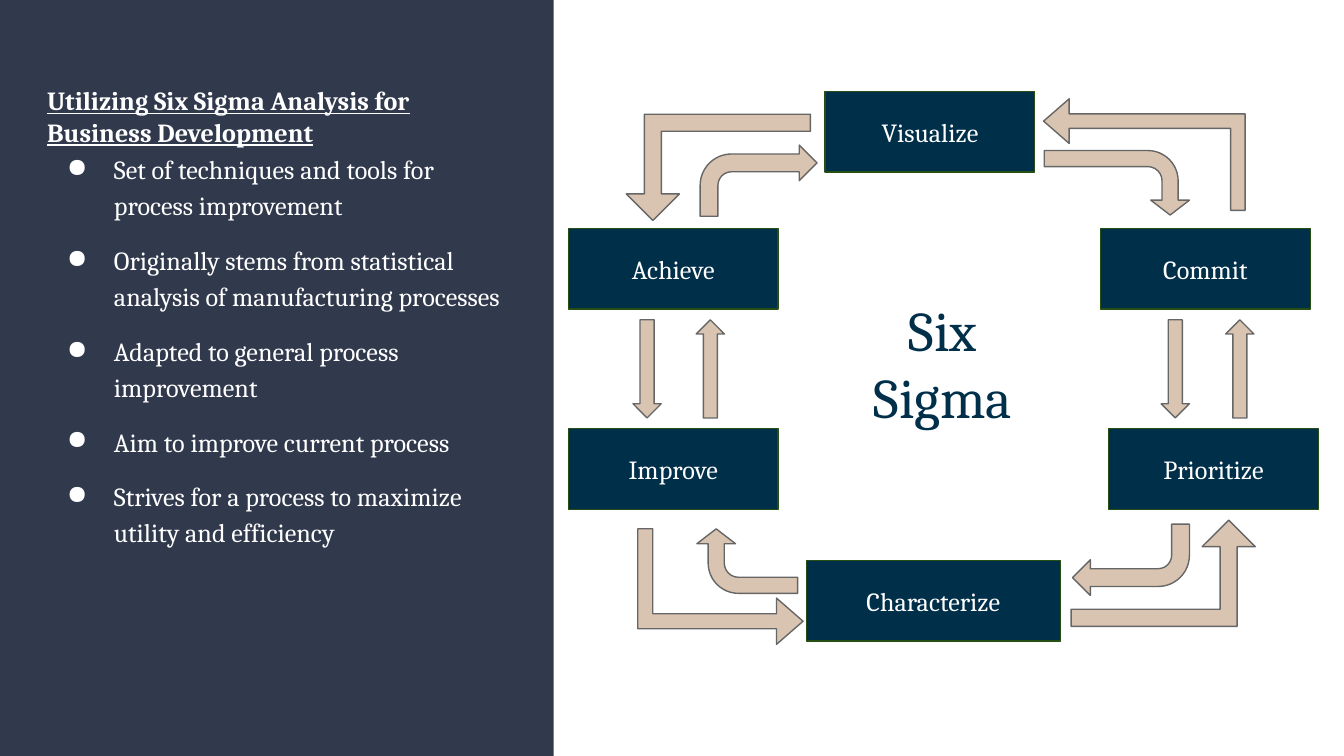
from lxml import etree
from pptx import Presentation
from pptx.dml.color import RGBColor
from pptx.enum.shapes import MSO_SHAPE
from pptx.enum.text import MSO_ANCHOR, MSO_AUTO_SIZE, PP_ALIGN
from pptx.oxml.ns import qn
from pptx.util import Inches, Pt

RECT = MSO_SHAPE.RECTANGLE
DOWN = MSO_SHAPE.DOWN_ARROW
CURVE = MSO_SHAPE.BENT_ARROW
ELBOW = MSO_SHAPE.BENT_UP_ARROW
TOP, MIDDLE = MSO_ANCHOR.TOP, MSO_ANCHOR.MIDDLE
LEFT, CENTER = PP_ALIGN.LEFT, PP_ALIGN.CENTER
FIXED = MSO_AUTO_SIZE.NONE

SLATE = RGBColor(0x31, 0x39, 0x4D)
NAVY = RGBColor(0x00, 0x2F, 0x4A)
GREEN = RGBColor(0x27, 0x4E, 0x13)
SAND = RGBColor(0xD9, 0xC4, 0xB1)
GRAY = RGBColor(0x66, 0x66, 0x66)
WHITE = RGBColor(0xFF, 0xFF, 0xFF)

FONT = "Cambria"
WIDTH = Inches(10)
HEIGHT = WIDTH * 9 // 16
CELL = WIDTH // 100

HEADING = "Utilizing Six Sigma Analysis for Business Development"
POINTS = [
    "Set of techniques and tools for process improvement",
    "Originally stems from statistical analysis of manufacturing processes",
    "Adapted to general process improvement",
    "Aim to improve current process",
    "Strives for a process to maximize utility and efficiency",
]
STEPS = [
    ("Visualize", 61.4, 6.8, 15.6),
    ("Commit", 81.9, 17, 15.6),
    ("Prioritize", 82.5, 31.9, 15.6),
    ("Achieve", 42.3, 17, 15.6),
    ("Improve", 42.3, 31.9, 15.6),
    ("Characterize", 60, 41.7, 18.9),
]
SMALL = (0.25, 0.25, 0.25, 0.44)
TIGHT = (0.25, 0.3, 0.23, 0.47)
BROAD = (0.16, 0.25, 0.25)
SLIM = (0.13, 0.2, 0.23)
BENDS = [
    (CURVE, (52.1, 10.8, 8.7, 5.3), 0, SMALL),
    (CURVE, (80.7, 8.2, 4.8, 10.8), 90, TIGHT),
    (CURVE, (79.8, 39, 8.7, 5.3), 180, SMALL),
    (CURVE, (53.2, 38, 4.8, 7.5), 270, TIGHT),
    (ELBOW, (46.6, 8.5, 13.7, 7.9), 180, BROAD),
    (ELBOW, (79.7, 38.7, 13.7, 7.9), 0, BROAD),
    (ELBOW, (49.3, 37.5, 8.6, 12.3), 90, SLIM),
    (ELBOW, (81, 4, 8.3, 15), 270, SLIM),
]
LANES = [(47.1, 0), (51.8, 180), (86.4, 0), (91.2, 180)]


def write(shape, lines, size=14, color=WHITE, bold=False, line=False,
          align=LEFT, anchor=TOP, gap=None, before=None):
    frame = shape.text_frame
    frame.word_wrap = True
    frame.auto_size = FIXED
    frame.vertical_anchor = anchor
    frame.margin_left = frame.margin_right = CELL
    frame.margin_top = frame.margin_bottom = CELL
    frame.text = "\n".join(lines)
    for para in frame.paragraphs:
        para.alignment = align
        if gap:
            para.line_spacing = gap
        if before:
            para.space_before = Pt(before)
        font = para.runs[0].font
        font.name, font.size = FONT, Pt(size)
        font.bold, font.underline = bold, line
        font.color.rgb = color
    return frame.paragraphs


class Deck:
    def __init__(self):
        self.file = Presentation()
        self.file.slide_width, self.file.slide_height = WIDTH, HEIGHT
        layout = self.file.slide_layouts[5]
        self.slide = self.file.slides.add_slide(layout)
        self.shapes = self.slide.shapes

    def place(self, *box):
        return [round(part * CELL) for part in box]

    def shape(self, kind, box, fill, edge=None):
        item = self.shapes.add_shape(kind, *self.place(*box))
        item.shadow.inherit = False
        item.fill.solid()
        item.fill.fore_color.rgb = fill
        if edge is None:
            item.line.fill.background()
        else:
            item.line.color.rgb = edge
            item.line.width = Pt(0.75)
        return item

    def panel(self, width):
        item = self.shape(RECT, (0, 0, width, HEIGHT / CELL), SLATE)
        self.shapes.title.element.addprevious(item.element)

    def title(self, text, box):
        item = self.shapes.title
        item.left, item.top, item.width, item.height = self.place(*box)
        write(item, [text], bold=True, line=True)

    def text(self, lines, box, **style):
        item = self.shapes.add_textbox(*self.place(*box))
        return write(item, lines, **style)

    def list(self, lines, box):
        for para in self.text(lines, box, gap=1.15, before=10):
            props = para._p.get_or_add_pPr()
            props.set("marL", str(Inches(0.5)))
            props.set("indent", str(Inches(-0.35)))
            tint = etree.SubElement(props, qn("a:buClr"))
            etree.SubElement(tint, qn("a:srgbClr"), val=str(WHITE))
            etree.SubElement(props, qn("a:buChar"), char="●")

    def step(self, text, left, top, width):
        item = self.shape(RECT, (left, top, width, 6), NAVY, GREEN)
        write(item, [text], align=CENTER, anchor=MIDDLE)

    def arrow(self, kind, box, turn, shares):
        item = self.shape(kind, box, SAND, GRAY)
        item.rotation = turn
        for spot, share in enumerate(shares):
            item.adjustments[spot] = share


def main():
    deck = Deck()
    deck.panel(41.2)
    deck.title(HEADING, (2.5, 5.3, 36.6, 6.8))
    deck.list(POINTS, (2.5, 10.1, 36.6, 40.8))
    for step in STEPS:
        deck.step(*step)
    deck.text(["Six Sigma"], (61.4, 23, 17.5, 7.9), size=30, color=NAVY,
              align=CENTER, anchor=MIDDLE)
    for left, turn in LANES:
        deck.arrow(DOWN, (left, 23.8, 2.1, 7.3), turn, (0.5, 0.5))
    for bend in BENDS:
        deck.arrow(*bend)
    deck.file.save("out.pptx")


if __name__ == "__main__":
    main()
